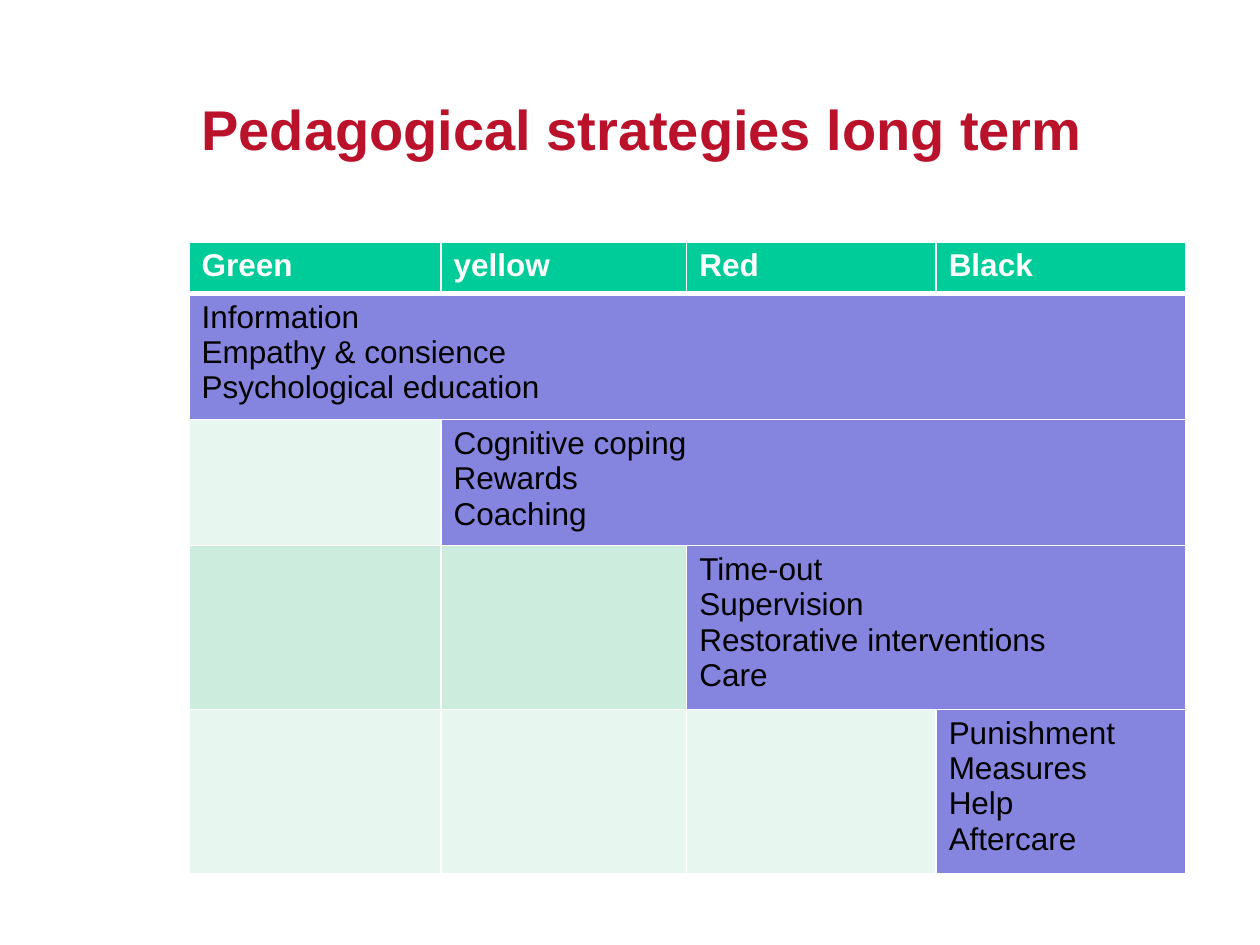
from dataclasses import dataclass

from lxml.etree import SubElement
from pptx import Presentation
from pptx.dml.color import RGBColor
from pptx.enum.text import MSO_ANCHOR
from pptx.oxml.ns import qn
from pptx.slide import Slide
from pptx.table import Table, _Cell as Cell
from pptx.util import Inches, Pt


@dataclass(frozen=True)
class Theme:
    font: str = "Arial"
    title_size: int = 32
    body_size: int = 18
    title: str = "BA122B"
    header: str = "00CC99"
    strategy: str = "8585E0"
    bands: tuple[str, str] = ("CCECDE", "E7F6EF")
    white: str = "FFFFFF"
    black: str = "000000"


@dataclass(frozen=True)
class Phase:
    name: str
    strategies: tuple[str, ...]
    row_height: float
    column_width: float


THEME = Theme()
HEADER_HEIGHT = 0.41
PHASES = (
    Phase("Green", ("Information", "Empathy & consience", "Psychological education"), 1, 2),
    Phase("yellow", ("Cognitive coping", "Rewards", "Coaching"), 1, 1.95),
    Phase("Red", ("Time-out", "Supervision", "Restorative interventions", "Care"), 1.3, 1.98),
    Phase("Black", ("Punishment", "Measures", "Help", "Aftercare"), 1.3, 1.98),
)


def write_text(frame, text: str, size: int, color: str, bold: bool) -> None:
    frame.text = text
    for paragraph in frame.paragraphs:
        font = paragraph.font
        for run in paragraph.runs:
            font = run.font
            font.name, font.size, font.bold = THEME.font, Pt(size), bold
            font.color.rgb = RGBColor.from_string(color)


def style_cell(cell: Cell, fill: str, bottom: int = 1, top: int = 1) -> None:
    # Borders come before the fill in the cell properties
    properties = cell._tc.get_or_add_tcPr()
    for side, width in (("L", 1), ("R", 1), ("T", top), ("B", bottom)):
        border = SubElement(properties, qn(f"a:ln{side}"), w=str(Pt(width)))
        solid = SubElement(border, qn("a:solidFill"))
        SubElement(solid, qn("a:srgbClr"), val=THEME.white)
    cell.fill.solid()
    cell.fill.fore_color.rgb = RGBColor.from_string(fill)


def add_title(slide: Slide, text: str) -> None:
    title = slide.shapes.add_textbox(Inches(1.5), Inches(0.39), Inches(8.08), Inches(1.25))
    title.text_frame.word_wrap = True
    title.text_frame.vertical_anchor = MSO_ANCHOR.MIDDLE
    write_text(title.text_frame, text, THEME.title_size, THEME.title, True)


def fill_phase(table: Table, index: int, phase: Phase) -> None:
    table.columns[index].width = Inches(phase.column_width)
    table.rows[index + 1].height = Inches(phase.row_height)

    # Header
    header = table.cell(0, index)
    style_cell(header, THEME.header, bottom=3)
    write_text(header.text_frame, phase.name, THEME.body_size, THEME.white, True)

    # Strategies start at their own phase and run on to the last one
    row, last = index + 1, len(PHASES) - 1
    for column in range(len(PHASES)):
        color = THEME.bands[index % 2] if column < index else THEME.strategy
        style_cell(table.cell(row, column), color, top=3 if index == 0 else 1)
    start = table.cell(row, index)
    if index < last:
        start.merge(table.cell(row, last))
    write_text(start.text_frame, "\n".join(phase.strategies),
               THEME.body_size, THEME.black, False)


def add_phase_table(slide: Slide) -> None:
    width = sum(phase.column_width for phase in PHASES)
    height = HEADER_HEIGHT + sum(phase.row_height for phase in PHASES)
    table = slide.shapes.add_table(len(PHASES) + 1, len(PHASES), Inches(1.5), Inches(1.92),
                                   Inches(width), Inches(height)).table
    table.horz_banding = False
    table.rows[0].height = Inches(HEADER_HEIGHT)
    for index, phase in enumerate(PHASES):
        fill_phase(table, index, phase)


def main() -> None:
    deck = Presentation()
    deck.slide_width, deck.slide_height = Inches(10), Inches(7.5)
    slide = deck.slides.add_slide(deck.slide_layouts[6])
    add_title(slide, "Pedagogical strategies long term")
    add_phase_table(slide)
    deck.save("out.pptx")


if __name__ == "__main__":
    main()
